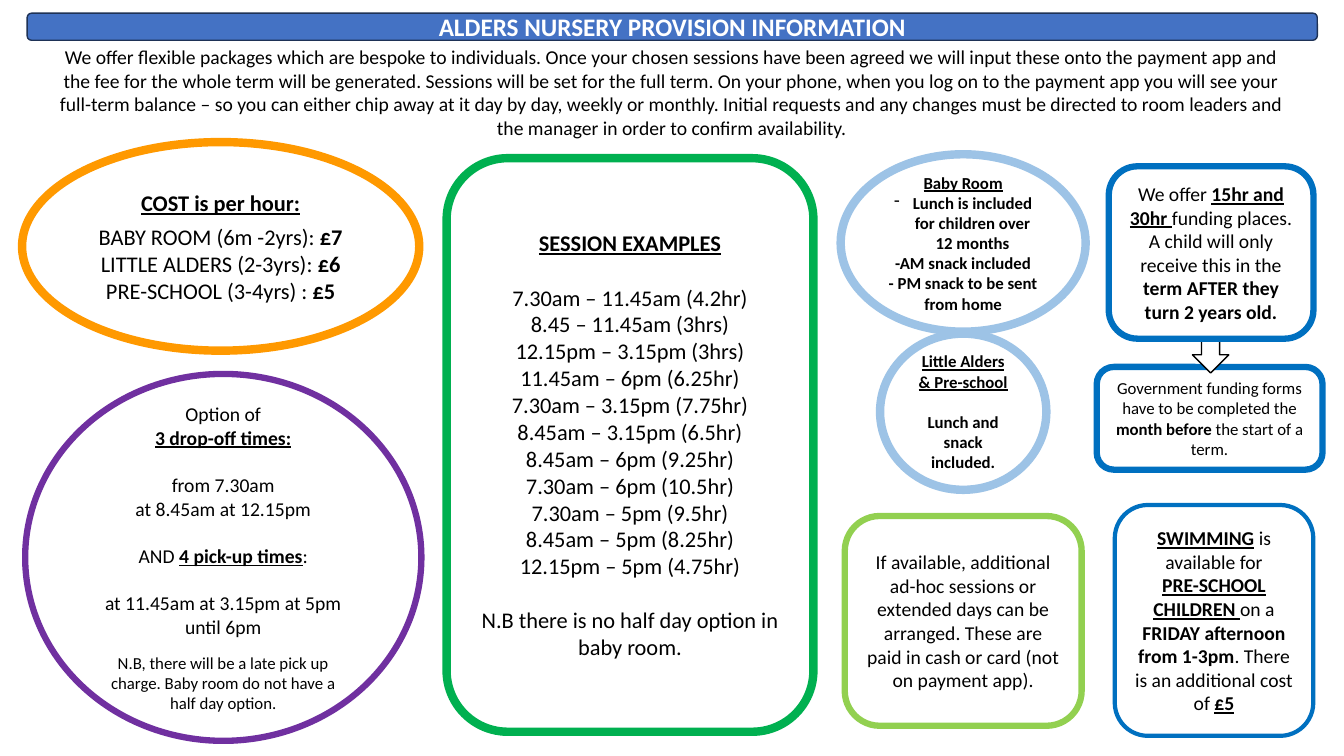
from pptx import Presentation
from pptx.util import Pt
from pptx.dml.color import RGBColor as RGB
from pptx.enum.shapes import MSO_SHAPE as Kind
from pptx.enum.text import MSO_ANCHOR as Anchor, MSO_AUTO_SIZE as Fit, PP_ALIGN as Align
from lxml.etree import SubElement
from pptx.oxml.ns import qn

HUES = {
    "white": "FFFFFF", "black": "000000", "bar": "4472C4", "edge": "1E3256",
    "green": "00B050", "purple": "7030A0", "orange": "FF9900",
    "blue": "0070C0", "lime": "92D050", "sky": "9DC3E6",
}


def write(shape, text, size=14, hue="black", inset=7.2, pad=3.6,
          anchor=Anchor.MIDDLE, gaps={}, sizes={}):
    """One paragraph per line; *bold* and *_bold underlined* marks."""
    frame = shape.text_frame
    frame.word_wrap = True
    frame.auto_size = Fit.NONE
    frame.vertical_anchor = anchor
    frame.margin_left = frame.margin_right = Pt(inset)
    frame.margin_top = frame.margin_bottom = Pt(pad)
    for row, line in enumerate(text.split("\n")):
        para = frame.add_paragraph() if row else frame.paragraphs[0]
        para.alignment = Align.CENTER
        para.line_spacing = 1.0
        para.space_before = Pt(gaps.get(row, 0))
        for turn, piece in enumerate(line.split("*")):
            if not piece:
                continue
            run = para.add_run()
            run.text = piece.removeprefix("_")
            font = run.font
            font.name, font.size = "Calibri", Pt(sizes.get(row, size))
            font.bold = turn % 2 == 1
            font.underline = piece.startswith("_")
            font.color.rgb = RGB.from_string(HUES[hue])


def draw(kind, place, line, width, fill="white"):
    shape = slide.shapes.add_shape(kind, *map(Pt, place))
    shape.shadow.inherit = False
    shape.fill.solid()
    shape.fill.fore_color.rgb = RGB.from_string(HUES[fill])
    shape.line.color.rgb = RGB.from_string(HUES[line])
    shape.line.width = Pt(width)
    return shape


deck = Presentation()
deck.slide_width, deck.slide_height = Pt(960), Pt(540)
slide = deck.slides.add_slide(deck.slide_layouts[5])
ROUND, OVAL = Kind.ROUNDED_RECTANGLE, Kind.OVAL

# Funding forms, with the arrow that leads to them
forms = draw(ROUND, (783.4, 262.1, 161.3, 73.4), "blue", 4.5)
write(forms, "Government funding forms have to be completed the "
      "*month before *the start of a term.", size=12)
draw(Kind.DOWN_ARROW, (851.8, 201.6, 25.9, 64.8), "black", 1)

# Title on its bar
place = (19.4, 9.4, 921.6, 19.4)
draw(ROUND, place, "edge", 1, fill="bar")
title = slide.shapes.title
title.left, title.top, title.width, title.height = map(Pt, place)
write(title, "*ALDERS NURSERY PROVISION INFORMATION*", size=18, hue="white", pad=0)
slide.shapes._spTree.append(title._element)

# Introduction
intro = slide.shapes.add_textbox(Pt(30.2), Pt(28.8), Pt(899.3), Pt(74.9))
write(intro, "We offer flexible packages which are bespoke to individuals. Once your "
      "chosen sessions have been agreed we will input these onto the payment app and "
      "the fee for the whole term will be generated. Sessions will be set for the full "
      "term. On your phone, when you log on to the payment app you will see your "
      "full-term balance – so you can either chip away at it day by day, weekly or "
      "monthly. Initial requests and any changes must be directed to room leaders and "
      "the manager in order to confirm availability.", inset=10.4, anchor=Anchor.TOP)

# Session examples
times = draw(ROUND, (319, 113, 262, 409.7), "green", 6)
write(times, """*_SESSION EXAMPLES*
7.30am – 11.45am (4.2hr)
8.45 – 11.45am (3hrs)
12.15pm – 3.15pm (3hrs)
11.45am – 6pm (6.25hr)
7.30am – 3.15pm (7.75hr)
8.45am – 3.15pm (6.5hr)
8.45am – 6pm (9.25hr)
7.30am – 6pm (10.5hr)
7.30am – 5pm (9.5hr)
8.45am – 5pm (8.25hr)
12.15pm – 5pm (4.75hr)
N.B there is no half day option in baby room.""", size=16, gaps={1: 19.5, 12: 19.5})

# Drop-off and pick-up times
runs = draw(OVAL, (18, 267.1, 283, 262.1), "purple", 4.5)
write(runs, """Option of
*_3 drop-off times:*
from 7.30am
at 8.45am at 12.15pm
AND *_4 pick-up times*:
at 11.45am at 3.15pm at 5pm
until 6pm
N.B, there will be a late pick up charge. Baby room do not have a half day option.""",
      inset=11, gaps={2: 17, 4: 17, 5: 17, 7: 10}, sizes={7: 12})

# Hourly cost
cost = draw(OVAL, (15.8, 101.5, 283.7, 149), "orange", 6)
write(cost, """*_COST is per hour:*
BABY ROOM (6m -2yrs): *£7*
LITTLE ALDERS (2-3yrs): *£6*
PRE-SCHOOL (3-4yrs) : *£5*""", size=16, gaps={1: 5})

# Funding, swimming and extra sessions
funds = draw(ROUND, (792, 118.8, 146.2, 123.1), "blue", 4.5)
write(funds, "We offer *_15hr and 30hr *funding places. A child will only receive "
      "this in the *term AFTER they turn 2 years old.*")
swim = draw(ROUND, (796.3, 360.7, 141.8, 164.9), "blue", 3)
write(swim, """*_SWIMMING* is available for
*_PRE-SCHOOL CHILDREN *on a
*FRIDAY afternoon from 1-3pm*. There is an additional cost of *_£5*""")
extra = draw(ROUND, (603.4, 368.6, 169.2, 149.8), "lime", 4.5)
write(extra, "If available, additional ad-hoc sessions or extended days can be arranged. "
      "These are paid in cash or card (not on payment app).", inset=8.2)

# Food in each room
baby = draw(OVAL, (600.5, 110.2, 175, 126.7), "sky", 6)
write(baby, """*_Baby Room*
*Lunch is included for children over 12 months*
*-AM snack included*
*- PM snack to be sent from home*""", size=12)
props = baby.text_frame.paragraphs[1]._p.get_or_add_pPr()
props.set("marL", str(Pt(13.5)))
props.set("indent", str(-Pt(13.5)))
SubElement(props, qn("a:buChar")).set("char", "-")
small = draw(OVAL, (628.6, 238.3, 118.8, 111.6), "sky", 6)
write(small, "*_Little Alders & Pre-school*\n*Lunch and snack included.*",
      size=12, gaps={1: 14.6})

deck.save("out.pptx")
